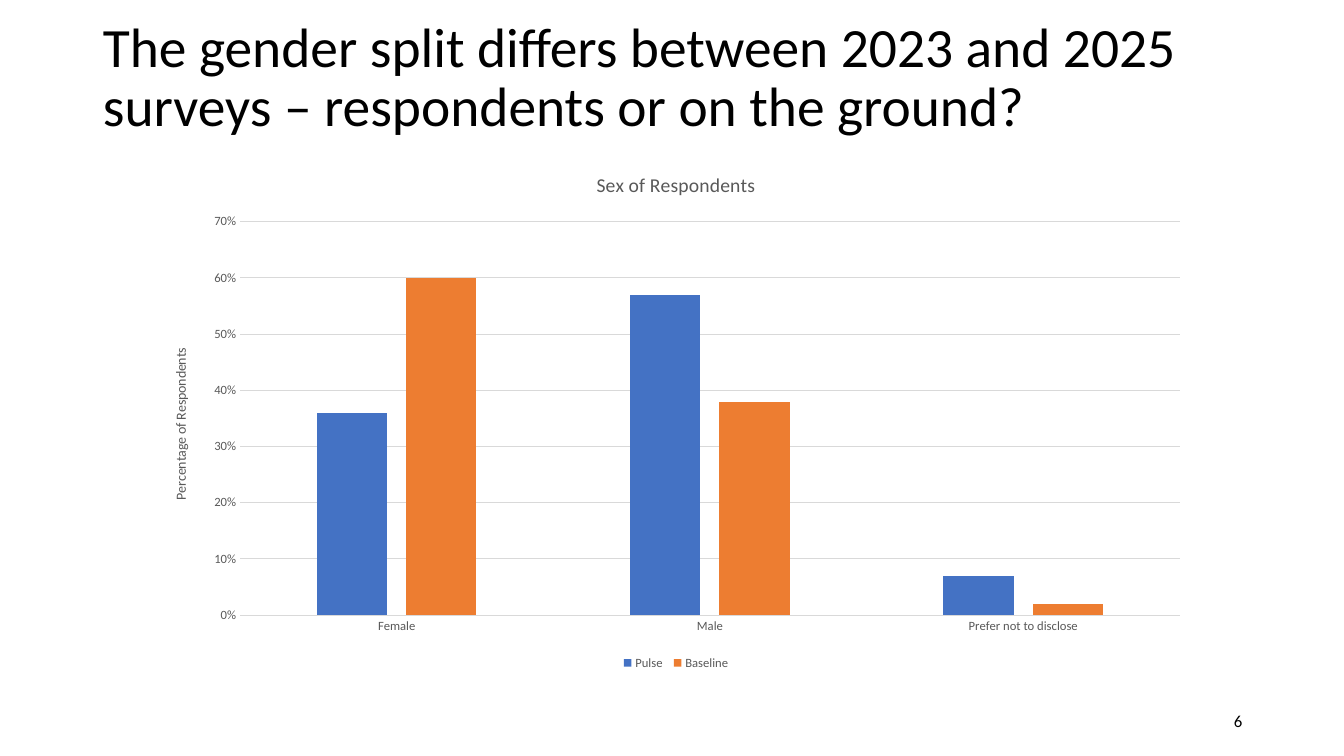
from dataclasses import dataclass

from pptx import Presentation
from pptx.chart.data import CategoryChartData
from pptx.dml.color import RGBColor
from pptx.enum.chart import XL_CHART_TYPE as ChartType
from pptx.enum.chart import XL_LEGEND_POSITION as LegendPos
from pptx.enum.chart import XL_TICK_MARK as Tick
from pptx.enum.text import MSO_ANCHOR as Anchor
from pptx.enum.text import MSO_AUTO_SIZE as AutoSize
from pptx.enum.text import PP_ALIGN as Align
from pptx.util import Pt

EMU_PER_PX = 9144  # 100 px to the inch
FONT = "Calibri"
BLACK, GREY, RULE = "000000", "595959", "D9D9D9"


@dataclass(frozen=True)
class Box:
    left: int
    top: int
    width: int
    height: int

    def emu(self) -> tuple[int, ...]:
        return tuple(px(v) for v in (self.left, self.top, self.width, self.height))


@dataclass(frozen=True)
class Survey:
    name: str
    shares: tuple[float, ...]
    color: str


TITLE_BOX = Box(92, 6, 1150, 145)
NUMBER_BOX = Box(942, 695, 300, 40)
CHART_BOX = Box(150, 151, 1041, 518)
ANSWERS = ("Female", "Male", "Prefer not to disclose")
SURVEYS = (
    Survey("Pulse ", (0.36, 0.57, 0.07), "4472C4"),
    Survey("Baseline", (0.60, 0.38, 0.02), "ED7D31"),
)


def px(n: int) -> int:
    return n * EMU_PER_PX


def rgb(color: str) -> RGBColor:
    return RGBColor.from_string(color)


def style_font(font, size: float, color: str) -> None:
    font.name, font.size, font.bold = FONT, Pt(size), False
    font.color.rgb = rgb(color)


def style_line(line, color: str, width: float = 0.75) -> None:
    line.color.rgb = rgb(color)
    line.width = Pt(width)


def write(tf, text: str, *, size: float, color: str = BLACK,
          align: Align = Align.LEFT, spacing: float = 1.0) -> None:
    p = tf.paragraphs[0]
    p.alignment, p.line_spacing = align, spacing
    r = p.add_run()
    r.text = text
    style_font(r.font, size, color)


def set_frame(tf) -> None:
    tf.word_wrap = True
    tf.auto_size = AutoSize.NONE
    tf.vertical_anchor = Anchor.MIDDLE


def add_survey_chart(s) -> None:
    data = CategoryChartData(number_format="0%")
    data.categories = ANSWERS
    for survey in SURVEYS:
        data.add_series(survey.name, survey.shares)
    chart = s.shapes.add_chart(ChartType.COLUMN_CLUSTERED, *CHART_BOX.emu(), data).chart
    style_font(chart.font, 10, BLACK)

    # Chart title and legend
    chart.has_title = True
    write(chart.chart_title.text_frame, "Sex of Respondents",
          size=14, color=GREY, align=Align.CENTER)
    chart.chart_title.include_in_layout = False
    chart.has_legend = True
    chart.legend.position = LegendPos.BOTTOM
    chart.legend.include_in_layout = False
    style_font(chart.legend.font, 9, GREY)

    # Columns
    plot = chart.plots[0]
    plot.gap_width, plot.overlap, plot.vary_by_categories = 219, -27, False
    for series, survey in zip(plot.series, SURVEYS):
        series.invert_if_negative = False
        series.format.fill.solid()
        series.format.fill.fore_color.rgb = rgb(survey.color)

    # Axes
    answers, share = chart.category_axis, chart.value_axis
    for axis in (answers, share):
        axis.major_tick_mark = axis.minor_tick_mark = Tick.NONE
        style_font(axis.tick_labels.font, 9, GREY)
    style_line(answers.format.line, RULE)
    share.format.line.fill.background()
    share.has_major_gridlines = True
    style_line(share.major_gridlines.format.line, RULE)
    share.minimum_scale, share.maximum_scale, share.major_unit = 0, 0.7, 0.1
    share.tick_labels.number_format = "0%"
    share.tick_labels.number_format_is_linked = False
    write(share.axis_title.text_frame, "Percentage of Respondents",
          size=10, color=GREY, align=Align.CENTER)


def main() -> None:
    prs = Presentation()
    prs.slide_width, prs.slide_height = px(1333), px(750)
    s = prs.slides.add_slide(prs.slide_layouts[5])

    # Title
    title = s.shapes.title
    title.left, title.top, title.width, title.height = TITLE_BOX.emu()
    set_frame(title.text_frame)
    write(title.text_frame,
          "The gender split differs between 2023 and 2025 surveys – "
          "respondents or on the ground?", size=39.6, spacing=0.9)

    # Slide number
    number = s.shapes.add_textbox(*NUMBER_BOX.emu())
    set_frame(number.text_frame)
    write(number.text_frame, "6", size=12, align=Align.RIGHT)

    add_survey_chart(s)
    prs.save("out.pptx")


if __name__ == "__main__":
    main()
